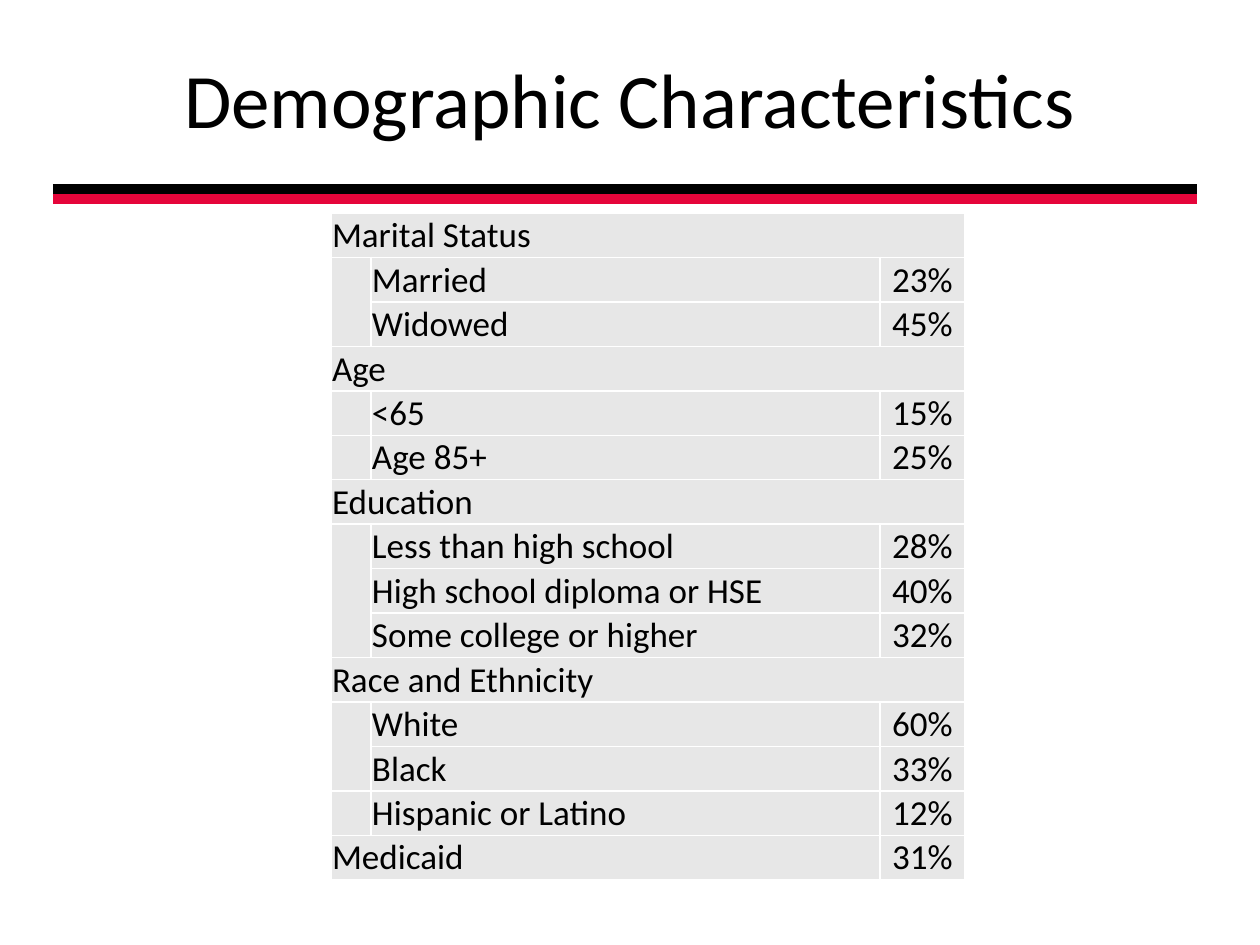
import dataclasses
import typing

import lxml.etree
import pptx
import pptx.dml.color
import pptx.enum.shapes
import pptx.enum.text
import pptx.oxml.ns
import pptx.util

EMU_PER_PX = 914400 / 126
BLACK, RED, WHITE, GREY = "000000", "E5053A", "FFFFFF", "E7E7E7"
FONT = "Calibri"
ALIGN = pptx.enum.text.PP_ALIGN
MIDDLE = pptx.enum.text.MSO_ANCHOR.MIDDLE
COLUMN_WIDTHS = (40, 509, 85)
TABLE_LEFT, TABLE_TOP, TABLE_HEIGHT = 331, 213, 667


@dataclasses.dataclass
class Rule:
    y: int
    color: str


@dataclasses.dataclass
class Category:
    label: str
    levels: tuple[tuple[str, str], ...] = ()
    share: str = ""
    indent_spans: tuple[int, ...] = ()


RULES = (Rule(189, BLACK), Rule(199, RED))
CATEGORIES = (
    Category("Marital Status", (("Married", "23%"), ("Widowed", "45%")), indent_spans=(2,)),
    Category("Age", (("<65", "15%"), ("Age 85+", "25%")), indent_spans=(1, 1)),
    Category(
        "Education",
        (("Less than high school", "28%"), ("High school diploma or HSE", "40%"),
         ("Some college or higher", "32%")),
        indent_spans=(3,),
    ),
    Category(
        "Race and Ethnicity",
        (("White", "60%"), ("Black", "33%"), ("Hispanic or Latino", "12%")),
        indent_spans=(2, 1),
    ),
    Category("Medicaid", share="31%"),
)


def px(length: float) -> pptx.util.Emu:
    return pptx.util.Emu(round(length * EMU_PER_PX))


def rgb(color: str) -> pptx.dml.color.RGBColor:
    return pptx.dml.color.RGBColor.from_string(color)


def write(frame: typing.Any, text: str, *, size: int = 20, align: typing.Any = ALIGN.LEFT) -> None:
    paragraph = frame.paragraphs[0]
    paragraph.alignment = align
    run = paragraph.add_run()
    run.text = text
    run.font.name = FONT
    run.font.size = pptx.util.Pt(size)
    run.font.color.rgb = rgb(BLACK)


def draw_title(slide: typing.Any, text: str) -> None:
    title = slide.shapes.add_textbox(px(63), px(19), px(1134), px(157))
    title.text_frame.word_wrap = True
    title.text_frame.vertical_anchor = MIDDLE
    write(title.text_frame, text, size=44, align=ALIGN.CENTER)


def draw_rule(slide: typing.Any, rule: Rule) -> None:
    line = slide.shapes.add_connector(
        pptx.enum.shapes.MSO_CONNECTOR.STRAIGHT, px(53), px(rule.y), px(1197), px(rule.y)
    )
    line.line.color.rgb = rgb(rule.color)
    line.line.width = pptx.util.Pt(6)
    lxml.etree.SubElement(line._element.spPr, pptx.oxml.ns.qn("a:effectLst"))


def style_cell(cell: typing.Any) -> None:
    cell.margin_left = cell.margin_right = cell.margin_top = px(1)
    cell.margin_bottom = 0
    cell.vertical_anchor = MIDDLE
    properties = cell._tc.get_or_add_tcPr()
    for side in ("L", "R", "T", "B"):
        border = lxml.etree.SubElement(
            properties, pptx.oxml.ns.qn(f"a:ln{side}"), w=str(pptx.util.Pt(1))
        )
        fill = lxml.etree.SubElement(border, pptx.oxml.ns.qn("a:solidFill"))
        lxml.etree.SubElement(fill, pptx.oxml.ns.qn("a:srgbClr"), val=WHITE)
    cell.fill.solid()
    cell.fill.fore_color.rgb = rgb(GREY)


def fill_category(table: typing.Any, top: int, category: Category) -> int:
    heading = table.cell(top, 0)
    heading.merge(table.cell(top, 1 if category.share else 2))
    write(heading.text_frame, category.label)
    if category.share:
        write(table.cell(top, 2).text_frame, category.share, align=ALIGN.CENTER)
    for row, (level, share) in enumerate(category.levels, top + 1):
        write(table.cell(row, 1).text_frame, level)
        write(table.cell(row, 2).text_frame, share, align=ALIGN.CENTER)
    row = top + 1
    for span in category.indent_spans:
        if span > 1:
            table.cell(row, 0).merge(table.cell(row + span - 1, 0))
        row += span
    return row


def draw_table(slide: typing.Any, categories: tuple[Category, ...]) -> None:
    row_count = sum(1 + len(category.levels) for category in categories)
    table = slide.shapes.add_table(
        row_count, len(COLUMN_WIDTHS), px(TABLE_LEFT), px(TABLE_TOP),
        px(sum(COLUMN_WIDTHS)), px(TABLE_HEIGHT),
    ).table
    table.first_row = table.horz_banding = False
    for column, width in zip(table.columns, COLUMN_WIDTHS):
        column.width = px(width)
    for row in table.rows:
        row.height = px(TABLE_HEIGHT / row_count)
    for cell in table.iter_cells():
        style_cell(cell)
    top = 0
    for category in categories:
        top = fill_category(table, top, category)


def main() -> None:
    """Build the demographic characteristics slide."""
    deck = pptx.Presentation()
    deck.slide_width, deck.slide_height = px(1260), px(945)
    slide = deck.slides.add_slide(deck.slide_layouts[6])
    for rule in RULES:
        draw_rule(slide, rule)
    draw_title(slide, "Demographic Characteristics")
    draw_table(slide, CATEGORIES)
    deck.save("out.pptx")


if __name__ == "__main__":
    main()
